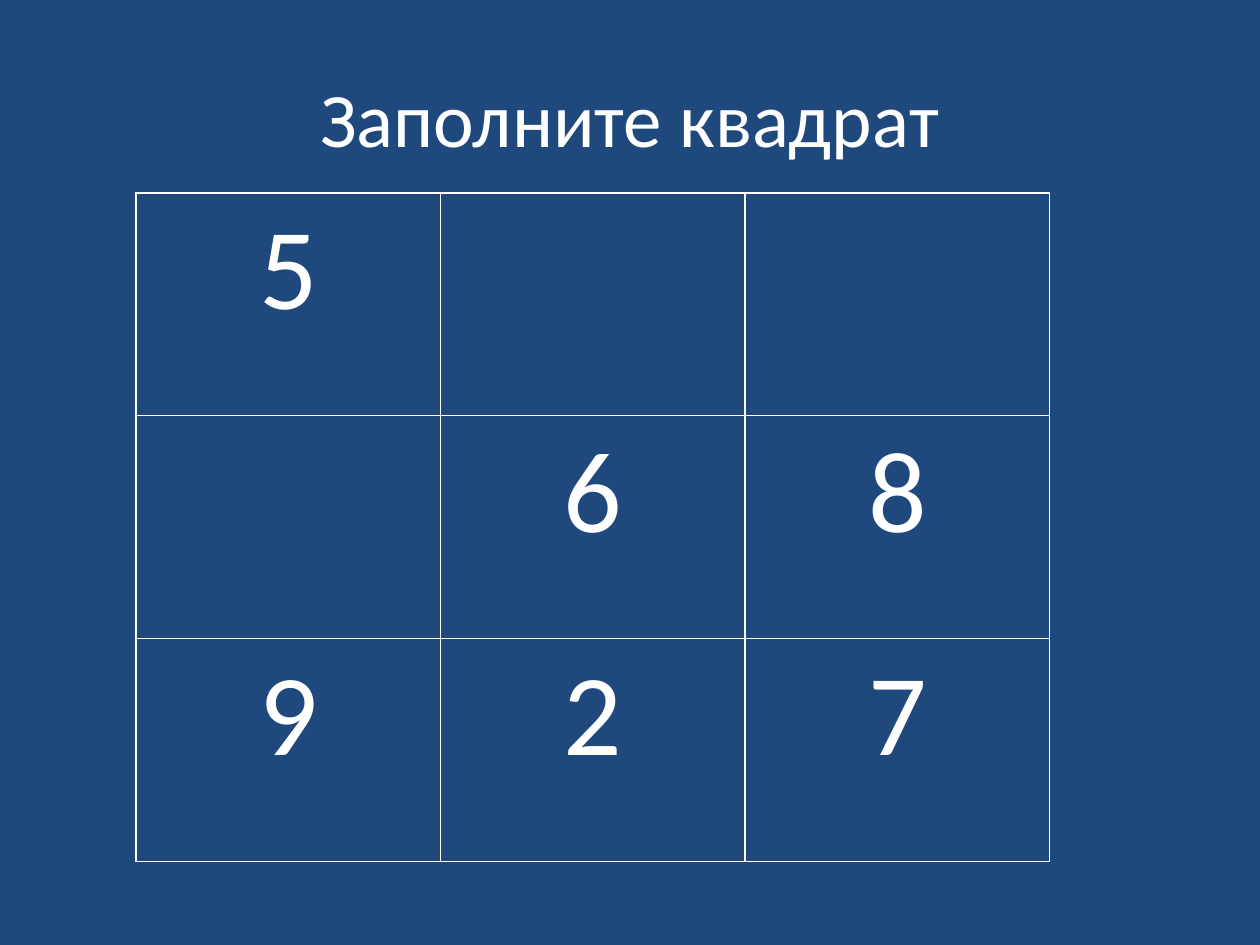
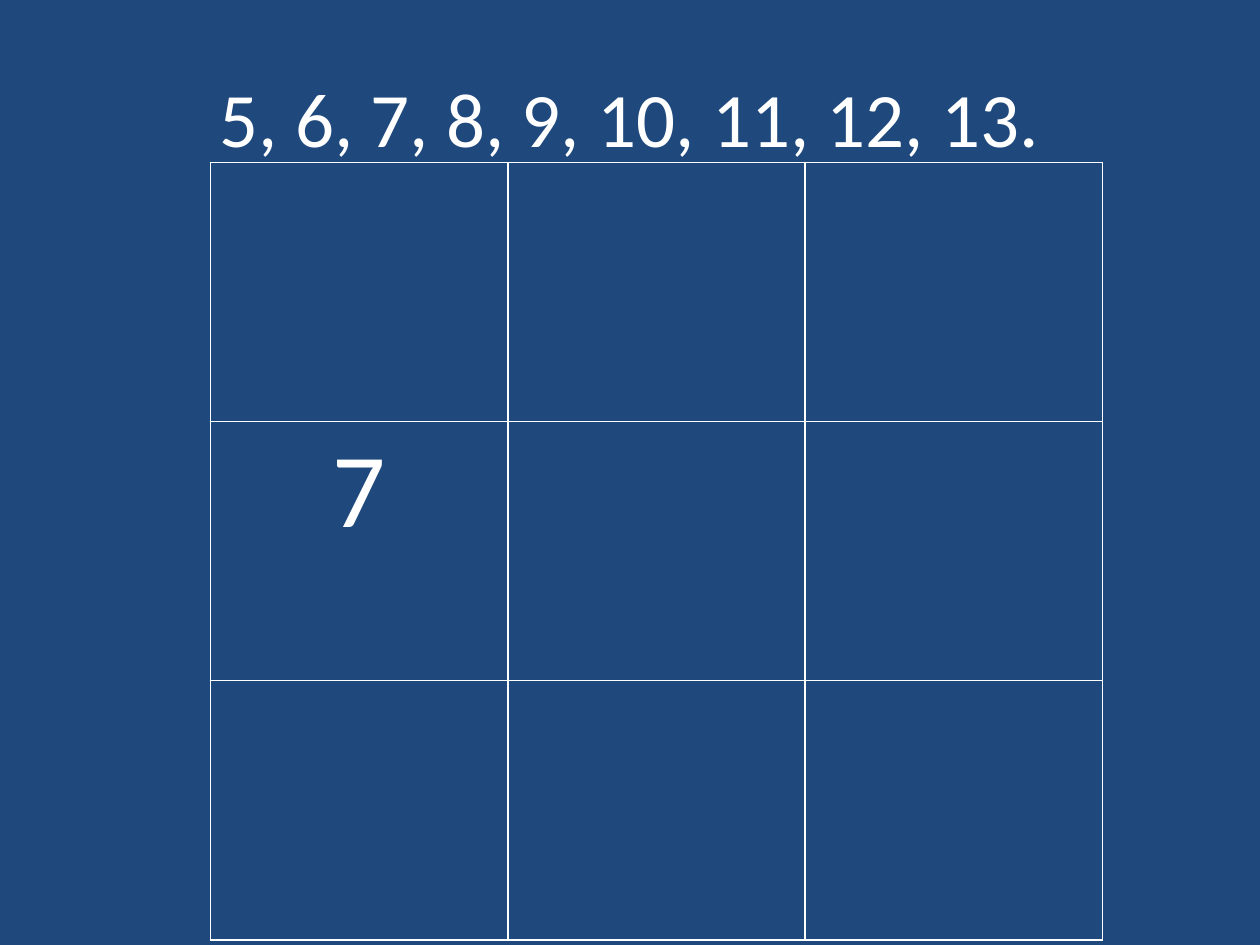
from dataclasses import dataclass

from lxml import etree
from pptx import Presentation
from pptx.dml.color import RGBColor
from pptx.enum.text import MSO_ANCHOR, PP_ALIGN
from pptx.oxml.ns import qn
from pptx.slide import Slide
from pptx.table import _Cell
from pptx.text.text import TextFrame
from pptx.util import Inches, Pt

CENTER = PP_ALIGN.CENTER
MIDDLE = MSO_ANCHOR.MIDDLE

COLORS = {"background": "1F497D", "foreground": "FFFFFF"}
FONT = "Calibri"
TITLE_SIZE = 44
BORDER_WIDTH = Pt(1)
BORDER_TAGS = ("a:lnL", "a:lnR", "a:lnT", "a:lnB")


@dataclass(frozen=True)
class MagicSquare:
    title: str
    left: float
    top: float
    width: float
    height: float
    digit_size: int
    rows: tuple[tuple[str, ...], ...]


SQUARES = (
    MagicSquare(
        "Заполните квадрат", 1.08, 1.53, 7.25, 5.31, 66,
        (("5", "", ""), ("", "6", "8"), ("9", "2", "7")),
    ),
    MagicSquare(
        "5, 6, 7, 8, 9, 10, 11, 12, 13.", 1.67, 1.29, 7.08, 6.17, 60,
        (("", "", ""), ("7", "", ""), ("", "", "")),
    ),
)


def write_centered(frame: TextFrame, text: str, size: int) -> None:
    paragraph = frame.paragraphs[0]
    paragraph.text = text
    paragraph.alignment = CENTER
    paragraph.font.name = FONT
    paragraph.font.size = Pt(size)
    paragraph.font.color.rgb = RGBColor.from_string(COLORS["foreground"])


def add_title(slide: Slide, text: str) -> None:
    title = slide.shapes.add_textbox(Inches(0.5), Inches(0.3), Inches(9), Inches(1.25))
    title.text_frame.word_wrap = True
    title.text_frame.vertical_anchor = MIDDLE
    write_centered(title.text_frame, text, TITLE_SIZE)


def outline_cell(cell: _Cell) -> None:
    """Draw all four borders; they must precede the fill in the cell properties."""
    properties = cell._tc.get_or_add_tcPr()
    for position, tag in enumerate(BORDER_TAGS):
        border = etree.Element(qn(tag), w=str(BORDER_WIDTH))
        fill = etree.SubElement(border, qn("a:solidFill"))
        etree.SubElement(fill, qn("a:srgbClr"), val=COLORS["foreground"])
        properties.insert(position, border)


def add_square(slide: Slide, square: MagicSquare) -> None:
    grid = slide.shapes.add_table(
        len(square.rows), len(square.rows[0]),
        Inches(square.left), Inches(square.top),
        Inches(square.width), Inches(square.height),
    ).table
    grid.first_row = False
    grid.horz_banding = False
    for row_index, digits in enumerate(square.rows):
        for column_index, digit in enumerate(digits):
            cell = grid.cell(row_index, column_index)
            cell.fill.background()
            outline_cell(cell)
            if digit:
                write_centered(cell.text_frame, digit, square.digit_size)


def main() -> None:
    presentation = Presentation()
    presentation.slide_width = Inches(10)
    presentation.slide_height = Inches(7.5)
    blank_layout = presentation.slide_layouts[6]
    for square in SQUARES:
        slide = presentation.slides.add_slide(blank_layout)
        slide.background.fill.solid()
        slide.background.fill.fore_color.rgb = RGBColor.from_string(COLORS["background"])
        add_title(slide, square.title)
        add_square(slide, square)
    presentation.save("out.pptx")


if __name__ == "__main__":
    main()
